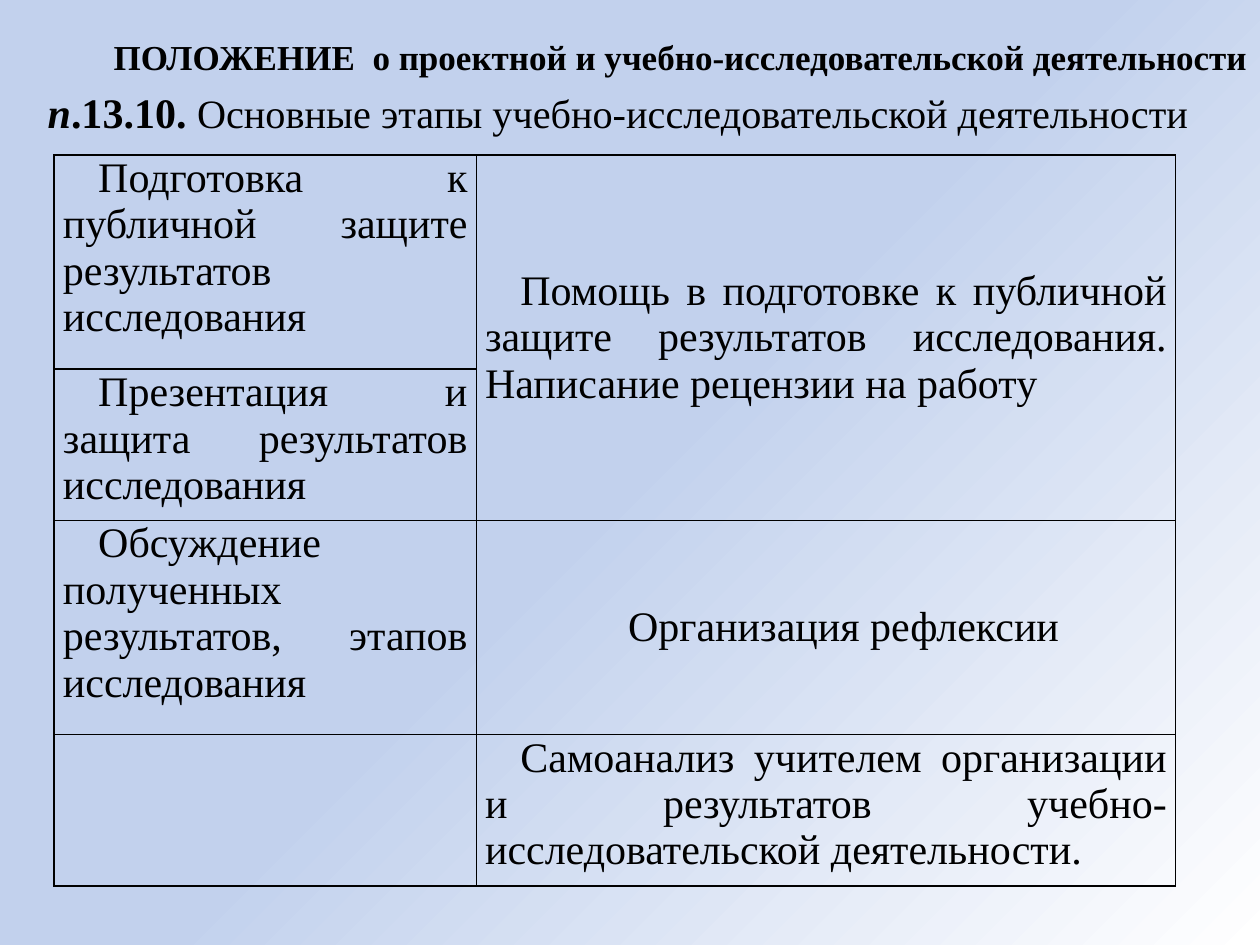
from pptx import Presentation
from pptx.dml.color import RGBColor
from pptx.enum.text import MSO_ANCHOR as Anchor, PP_ALIGN as Align
from pptx.oxml import parse_xml
from pptx.oxml.ns import nsdecls
from pptx.util import Inches, Pt

COLORS = {"ink": "000000", "gray": "BFBFBF", "white": "FFFFFF", "blue": "C2D1ED"}
FONT = "Times New Roman"
BODY_SIZE = 24
COLUMN_WIDTHS = [3.35, 5.55]
ROW_HEIGHTS = [1.7, 1.13, 1.7, 1.13]
STAGES = [
    "Подготовка к публичной защите результатов исследования",
    "Презентация и защита результатов исследования",
    "Обсуждение полученных результатов, этапов исследования",
]
# row: (text, alignment, anchor)
SUPPORT = {
    0: ("Помощь в подготовке к публичной защите результатов исследования. "
        "Написание рецензии на работу", Align.JUSTIFY, Anchor.MIDDLE),
    2: ("Организация рефлексии", Align.CENTER, Anchor.MIDDLE),
    3: ("Самоанализ учителем организации и результатов "
        "учебно-исследовательской деятельности.", Align.JUSTIFY, Anchor.TOP),
}


class SlideBuilder:
    """Holds the text style and the slide being built."""

    def __init__(self, slide):
        self.slide = slide

    def background(self, stops):
        """Fill the slide with a gradient that spreads from the lower right corner."""
        stop_xml = "".join(
            f'<a:gs pos="{percent * 1000}"><a:srgbClr val="{COLORS[name]}"/></a:gs>'
            for percent, name in stops)
        self.slide._element.cSld.insert(0, parse_xml(
            f'<p:bg {nsdecls("p", "a")}><p:bgPr><a:gradFill rotWithShape="1">'
            f'<a:gsLst>{stop_xml}</a:gsLst><a:path path="circle">'
            '<a:fillToRect l="100000" t="100000"/></a:path></a:gradFill>'
            '<a:effectLst/></p:bgPr></p:bg>'))

    def style(self, span, size, bold=False, italic=False):
        font = span.font
        font.name, font.size, font.bold, font.italic = FONT, Pt(size), bold, italic
        font.color.rgb = RGBColor.from_string(COLORS["ink"])

    def text(self, left, top, width, height, spans, align, anchor, top_inset=0.05):
        """Add one paragraph; each span is (text, size, bold, italic)."""
        box = self.slide.shapes.add_textbox(*map(Inches, (left, top, width, height)))
        frame = box.text_frame
        frame.word_wrap = True
        frame.vertical_anchor = anchor
        frame.margin_top = Inches(top_inset)
        para = frame.paragraphs[0]
        para.alignment = align
        for words, *look in spans:
            span = para.add_run()
            span.text = words
            self.style(span, *look)

    def table(self, left, top, widths, heights):
        """Add an unfilled table with thin black borders."""
        frame = self.slide.shapes.add_table(
            len(heights), len(widths),
            *map(Inches, (left, top, sum(widths), sum(heights))))
        table = frame.table
        table.first_row = table.horz_banding = False
        for column, width in zip(table.columns, widths):
            column.width = Inches(width)
        for row, height in zip(table.rows, heights):
            row.height = Inches(height)
        for cell in table.iter_cells():
            cell.margin_left = cell.margin_right = Inches(0.07)
            cell.margin_top = cell.margin_bottom = 0
            properties = cell._tc.get_or_add_tcPr()
            for side in ("lnL", "lnR", "lnT", "lnB"):
                properties.append(parse_xml(
                    f'<a:{side} {nsdecls("a")} w="{Pt(1)}"><a:solidFill>'
                    f'<a:srgbClr val="{COLORS["ink"]}"/></a:solidFill></a:{side}>'))
            cell.fill.background()
        return table

    def cell_text(self, cell, words, align=Align.JUSTIFY, anchor=Anchor.TOP):
        cell.vertical_anchor = anchor
        para = cell.text_frame.paragraphs[0]
        para.text = words
        para.alignment = align
        para._p.get_or_add_pPr().set("indent", str(Inches(0.28)))
        self.style(para.runs[0], BODY_SIZE)


def main():
    deck = Presentation()
    deck.slide_width, deck.slide_height = Inches(10), Inches(7.5)
    page = SlideBuilder(deck.slides.add_slide(deck.slide_layouts[6]))
    page.background([(0, "gray"), (0, "white"), (50, "blue")])

    page.text(0.2, 0.21, 9.8, 0.47,
              [("ПОЛОЖЕНИЕ  о проектной и учебно-исследовательской деятельности", 20, True)],
              Align.RIGHT, Anchor.MIDDLE)
    page.text(0.28, 0.6, 9.45, 0.47,
              [("п", 24, True, True), (".13.10. ", 24, True),
               ("Основные этапы учебно-исследовательской деятельности", 23)],
              Align.JUSTIFY, Anchor.TOP, top_inset=0.09)

    table = page.table(0.43, 1.23, COLUMN_WIDTHS, ROW_HEIGHTS)
    table.cell(0, 1).merge(table.cell(1, 1))
    for row, words in enumerate(STAGES):
        page.cell_text(table.cell(row, 0), words)
    for row, content in SUPPORT.items():
        page.cell_text(table.cell(row, 1), *content)

    deck.save("out.pptx")


if __name__ == "__main__":
    main()
